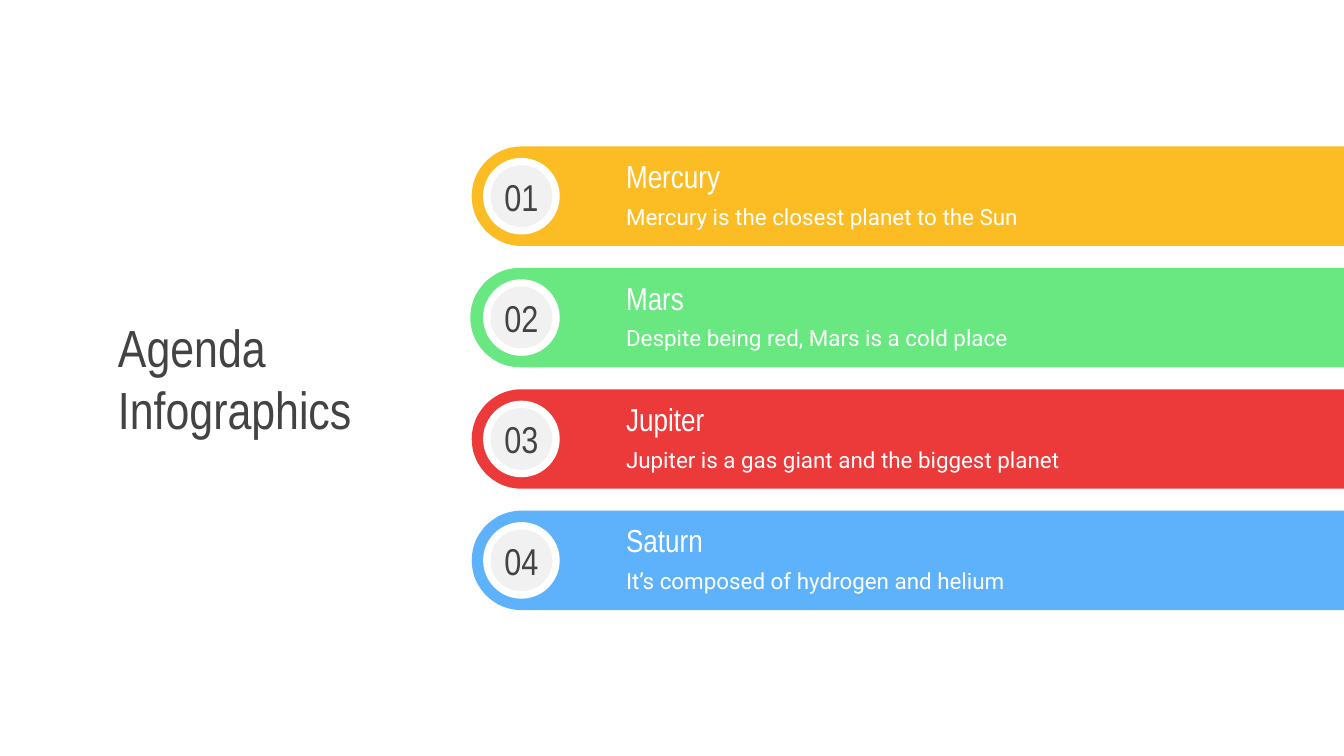
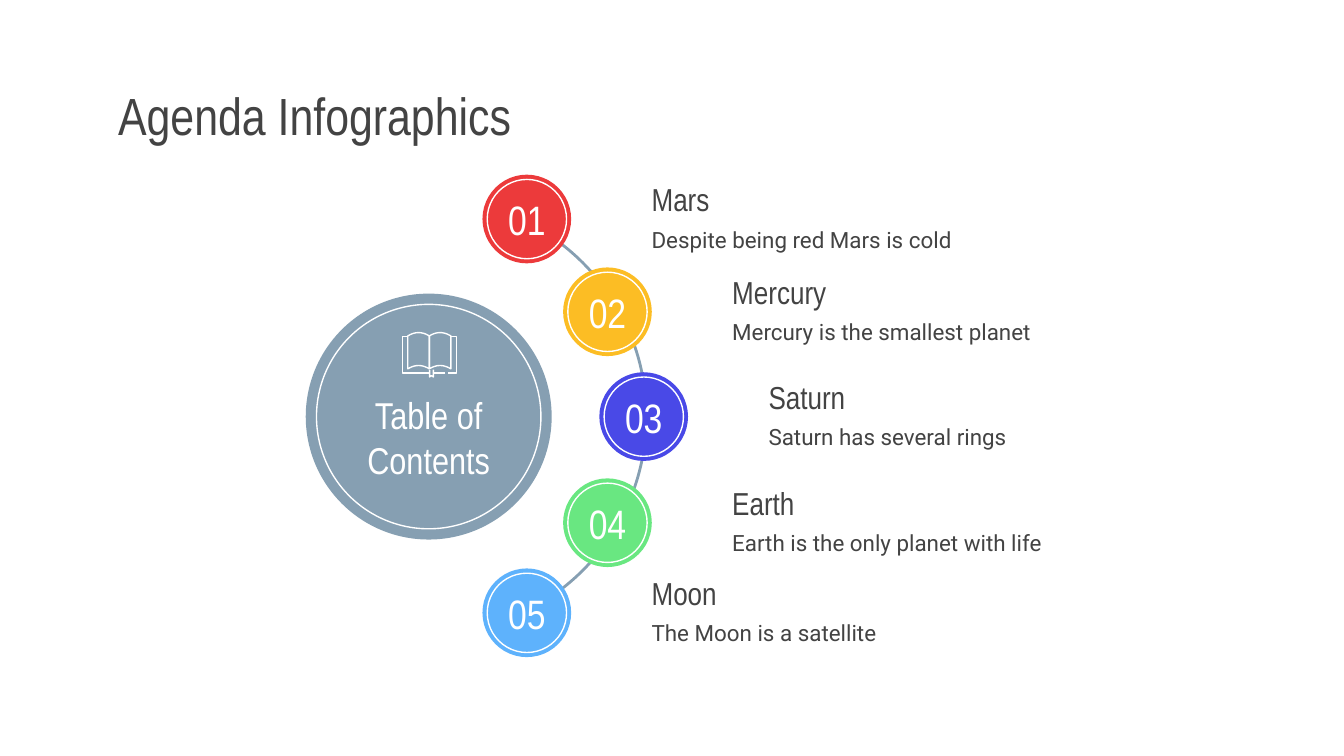
import math
from pptx import Presentation
from pptx import util as u
from pptx.dml.color import RGBColor
from pptx.enum import shapes, text

HEAD, BODY = "Arial Narrow", "Roboto"
INK, WHITE, PALE, SLATE = "434343", "FFFFFF", "F1F1F1", "869FB2"
YELLOW, GREEN, RED, BLUE, INDIGO = "FCBD24", "69E781", "EC3A3B", "5EB2FC", "4949E7"
TITLE = "Agenda Infographics"

BARS = [
    ("Mercury", "Mercury is the closest planet to the Sun", YELLOW, 3.51),
    ("Mars", "Despite being red, Mars is a cold place", GREEN, 3.5),
    ("Jupiter", "Jupiter is a gas giant and the biggest planet", RED, 3.51),
    ("Saturn", "It’s composed of hydrogen and helium", BLUE, 3.51),
]
BAR_FIRST, BAR_LAST, BAR_R = 1.46, 4.17, 0.37

HUB_X, HUB_Y, ORBIT_R = 3.19, 3.1, 1.62
HUB_TEXT = ["Table of", "Contents"]
PLANETS = [
    ("Mars", "Despite being red Mars is cold", RED, 0.73, -1.47),
    ("Mercury", "Mercury is the smallest planet", YELLOW, 1.33, -0.78),
    ("Saturn", "Saturn has several rings", INDIGO, 1.6, 0),
    ("Earth", "Earth is the only planet with life", GREEN, 1.33, 0.79),
    ("Moon", "The Moon is a satellite", BLUE, 0.73, 1.46),
]
BOOK_X, BOOK_Y = 2.99, 2.47


def color(value):
    return RGBColor.from_string(value)


def style(sp, fill=None, line=None, width=0.75):
    sp.shadow.inherit = False
    if fill:
        sp.fill.solid()
        sp.fill.fore_color.rgb = color(fill)
    else:
        sp.fill.background()
    if line:
        sp.line.color.rgb = color(line)
        sp.line.width = u.Pt(width)
    else:
        sp.line.fill.background()


def write(sp, lines, size, font, ink, centered=False, inset=0.1, top=None):
    tf = sp.text_frame
    tf.word_wrap = not centered
    tf.vertical_anchor = text.MSO_ANCHOR.MIDDLE
    tf.margin_left = tf.margin_right = tf.margin_bottom = u.Inches(inset)
    tf.margin_top = u.Inches(inset if top is None else top)
    p = tf.paragraphs[0]
    p.alignment = text.PP_ALIGN.CENTER if centered else text.PP_ALIGN.LEFT
    for i, line in enumerate(lines):
        if i:
            p.add_line_break()
        r = p.add_run()
        r.text = line
        r.font.size = u.Pt(size)
        r.font.name = font
        r.font.color.rgb = color(ink)


def label(s, x, y, w, h, line, size, font, ink):
    box = s.shapes.add_textbox(u.Inches(x), u.Inches(y), u.Inches(w), u.Inches(h))
    write(box, [line], size, font, ink)


def title(s, y, w, h):
    label(s, 0.78, y, w, h, TITLE, 28, HEAD, INK)


def caption(s, x, cy, w, name, detail, ink):
    label(s, x, cy - 0.05, w, 0.4, detail, 12, BODY, ink)
    label(s, x, cy - 0.35, w, 0.4, name, 17, HEAD, ink)


def centered_shape(s, kind, cx, cy, d):
    return s.shapes.add_shape(kind, u.Inches(cx - d / 2), u.Inches(cy - d / 2), u.Inches(d), u.Inches(d))


def disc(s, cx, cy, d, fill=None, line=None):
    sp = centered_shape(s, shapes.MSO_SHAPE.OVAL, cx, cy, d)
    style(sp, fill, line)
    return sp


def outline(s, x, y, contours):
    start = contours[0][0][0]
    fb = s.shapes.build_freeform(*start, scale=914.4)
    for i, (points, closed) in enumerate(contours):
        if i:
            fb.move_to(*points[0])
        fb.add_line_segments(points[1:], close=closed)
    return fb.convert_to_shape(u.Inches(x), u.Inches(y))


def bar(s, left, cy, fill):
    r, width = BAR_R * 1000, (10 - left) * 1000
    cap = [(r - r * math.sin(a), r - r * math.cos(a))
           for a in (math.pi * i / 40 for i in range(41))]
    sp = outline(s, left, cy - BAR_R, [(cap + [(width, 2 * r), (width, 0)], True)])
    style(sp, fill)


def book_page(left, right):
    steps = [i / 10 for i in range(11)]
    crest = [(left + (right - left) * t, 30 - 100 * t * (1 - t)) for t in steps]
    return crest + [(x, y + 245) for x, y in reversed(crest)], True


def book(s):
    sp = outline(s, BOOK_X, BOOK_Y, [
        book_page(45, 205),
        book_page(205, 365),
        ([(45, 35), (5, 35), (5, 305), (205, 305)], False),
        ([(365, 35), (405, 35), (405, 305), (345, 305)], False),
        ([(325, 305), (235, 305)], False),
        ([(207, 285), (207, 335), (221, 325), (235, 335), (235, 280)], False),
    ])
    style(sp, line=WHITE)


def bars_slide(s):
    title(s, 2.35, 2.17, 0.92)
    pitch = (BAR_LAST - BAR_FIRST) / (len(BARS) - 1)
    for i, (name, detail, fill, left) in enumerate(BARS):
        cy = BAR_FIRST + i * pitch
        bar(s, left, cy, fill)
        disc(s, 3.88, cy, 0.57, WHITE)
        write(disc(s, 3.88, cy, 0.46, PALE), [f"{i + 1:02}"], 20, HEAD, INK, True, 0)
        caption(s, 4.56, cy, 3.51, name, detail, WHITE)


def orbit_slide(s):
    orbit = centered_shape(s, shapes.MSO_SHAPE.ARC, HUB_X, HUB_Y, 2 * ORBIT_R)
    for i, degrees in enumerate((296.9, 64.1)):
        orbit.adjustments[i] = degrees * 0.6
    style(orbit, line=SLATE, width=1.5)
    disc(s, HUB_X, HUB_Y, 1.83, SLATE)
    write(disc(s, HUB_X, HUB_Y, 1.67, line=WHITE), HUB_TEXT, 20, HEAD, WHITE, True, top=0.4)
    book(s)
    title(s, 0.59, 8.45, 0.53)
    for i, (name, detail, fill, dx, dy) in enumerate(PLANETS):
        cx, cy = HUB_X + dx, HUB_Y + dy
        disc(s, cx, cy, 0.66, fill)
        caption(s, cx + 0.83, cy, 2.84, name, detail, INK)
        write(disc(s, cx, cy, 0.59, line=WHITE), [f"{i + 1:02}"], 22, HEAD, WHITE, True, 0)


def main():
    prs = Presentation()
    prs.slide_width = u.Inches(10)
    prs.slide_height = u.Inches(10 * 9 / 16)
    for build in (bars_slide, orbit_slide):
        build(prs.slides.add_slide(prs.slide_layouts[6]))
    prs.save("out.pptx")


if __name__ == "__main__":
    main()
